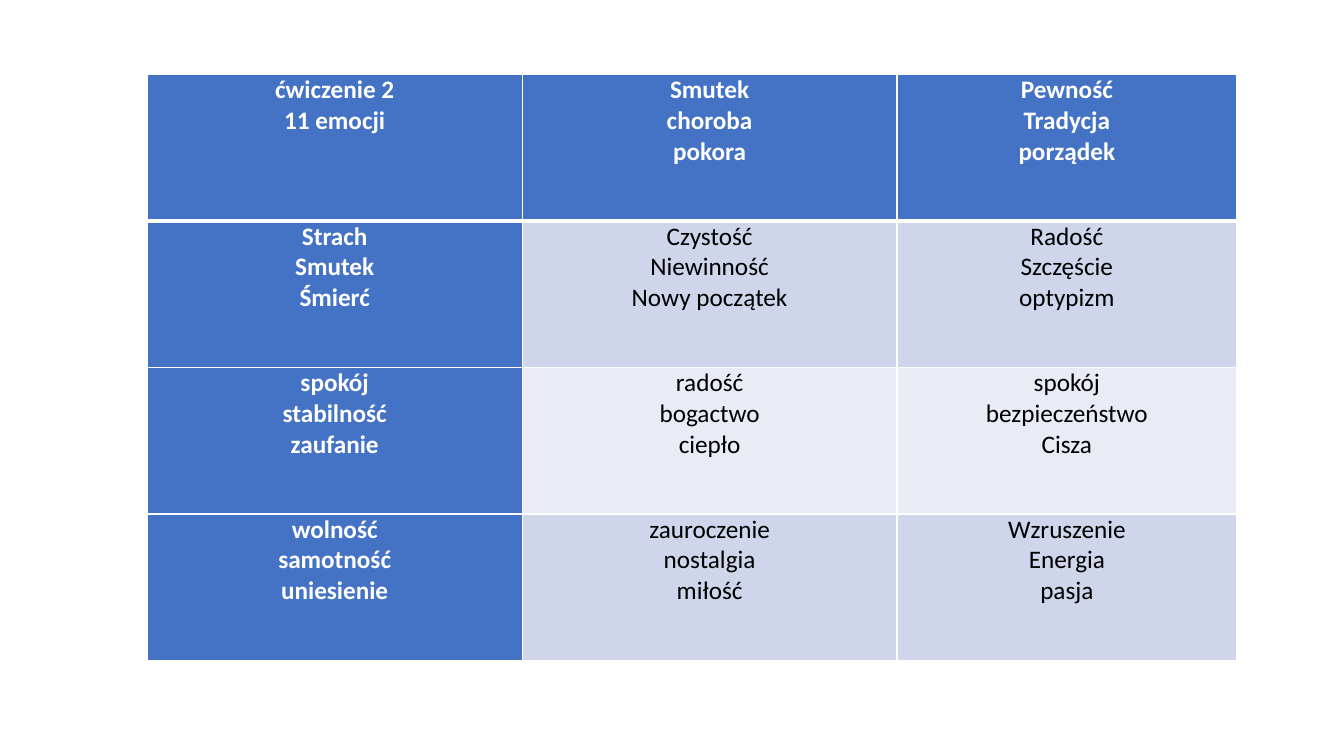
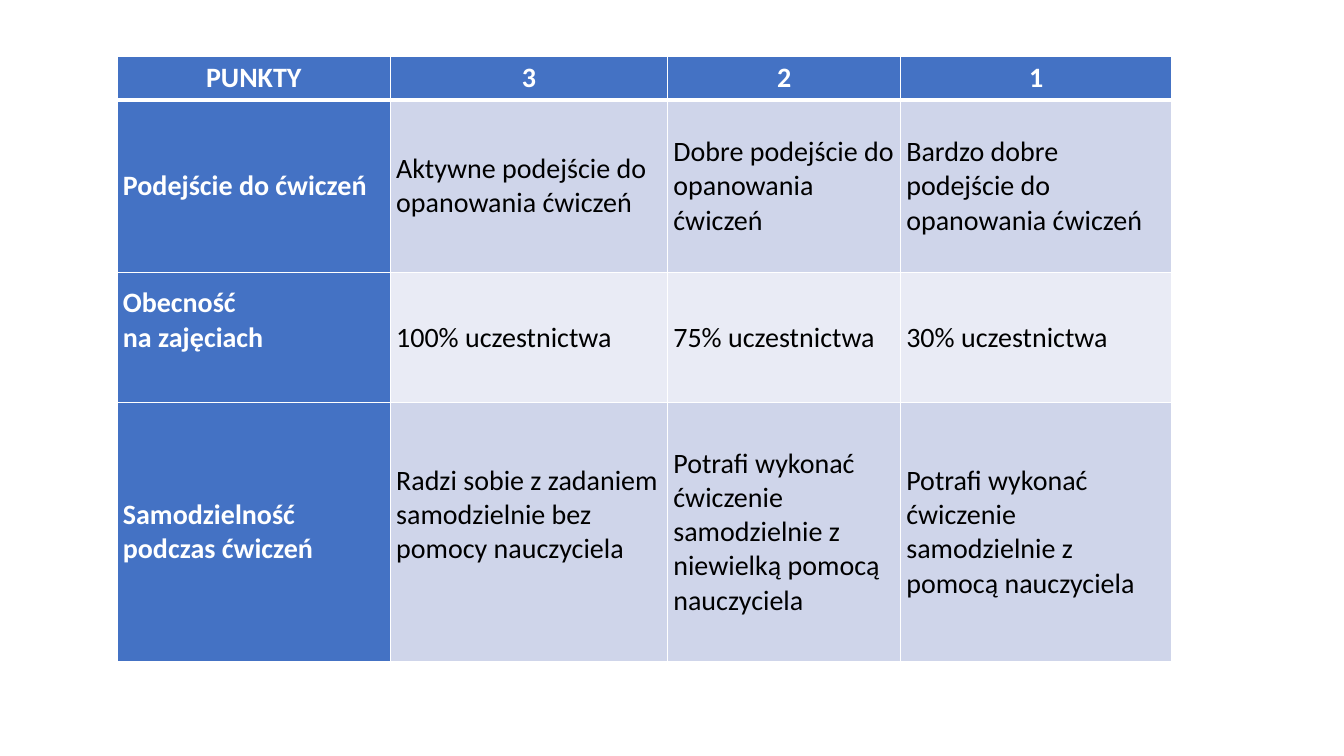
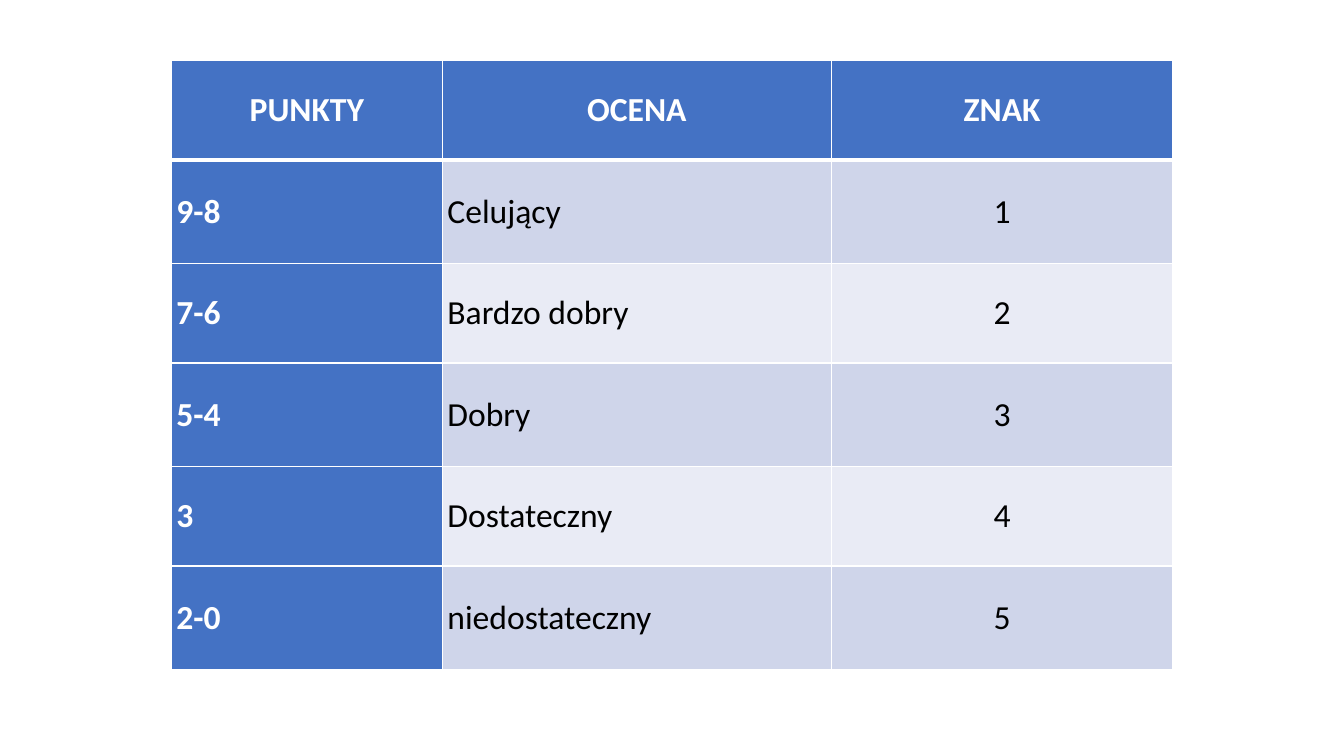
from dataclasses import dataclass

from lxml.etree import SubElement
from pptx import Presentation
from pptx.dml.color import RGBColor
from pptx.enum.text import MSO_ANCHOR as Anchor, PP_ALIGN as Align
from pptx.oxml.ns import qn
from pptx.util import Pt

FONT = "Calibri"
WHITE = "FFFFFF"
BLACK = "000000"
ACCENT = "4472C4"
BANDS = ("CFD5EA", "E9EBF5")
THIN, THICK = 1, 3

Lines = tuple[str, ...]


@dataclass(frozen=True)
class Grid:
    left: float
    top: float
    widths: tuple[float, ...]
    heights: tuple[float, ...]
    rows: tuple[tuple[Lines, ...], ...]
    size: float
    inset: float
    anchor: Anchor
    centred_columns: tuple[int, ...] = ()
    raised_cells: tuple[tuple[int, int], ...] = ()


EMOTIONS = Grid(
    left=105.2, top=53.4,
    widths=(267.8, 267.8, 242.6),
    heights=(104.6,) * 4,
    size=18, inset=3.6, anchor=Anchor.TOP, centred_columns=(0, 1, 2),
    rows=(
        (("ćwiczenie 2\n11 emocji",), ("Smutek", "choroba", "pokora"),
         ("Pewność", "Tradycja", "porządek")),
        (("Strach", "Smutek", "Śmierć"), ("Czystość", "Niewinność", "Nowy początek"),
         ("Radość", "Szczęście", "optypizm")),
        (("spokój", "stabilność", "zaufanie"), ("radość", "bogactwo", "ciepło"),
         ("spokój", "bezpieczeństwo", "Cisza")),
        (("wolność", "samotność", "uniesienie"), ("zauroczenie", "nostalgia", "miłość"),
         ("Wzruszenie", "Energia", "pasja")),
    ),
)

CRITERIA = Grid(
    left=83.7, top=40.4,
    widths=(195.2, 198, 166.4, 193.6),
    heights=(30.8, 123.6, 92.8, 185),
    size=20, inset=4.1, anchor=Anchor.MIDDLE, raised_cells=((2, 0), (3, 1)),
    rows=(
        (("PUNKTY",), ("3",), ("2",), ("1",)),
        (("Podejście do ćwiczeń",), ("Aktywne podejście do opanowania ćwiczeń",),
         ("Dobre podejście do opanowania ćwiczeń",),
         ("Bardzo dobre podejście do opanowania ćwiczeń",)),
        (("Obecność \nna zajęciach",), ("100% uczestnictwa",), ("75% uczestnictwa",),
         ("30% uczestnictwa",)),
        (("Samodzielność podczas ćwiczeń",),
         ("Radzi sobie z zadaniem samodzielnie bez pomocy nauczyciela",),
         ("Potrafi wykonać ćwiczenie samodzielnie z niewielką pomocą nauczyciela",),
         ("Potrafi wykonać ćwiczenie samodzielnie z pomocą nauczyciela",)),
    ),
)

GRADES = Grid(
    left=122.4, top=43.4,
    widths=(193.6, 277.8, 244),
    heights=(71, 74) * 3,
    size=24, inset=3.6, anchor=Anchor.MIDDLE, centred_columns=(2,),
    rows=(
        (("PUNKTY",), ("OCENA",), ("ZNAK",)),
        (("9-8",), ("Celujący",), ("1",)),
        (("7-6",), ("Bardzo dobry",), ("2",)),
        (("5-4",), ("Dobry",), ("3",)),
        (("3",), ("Dostateczny",), ("4",)),
        (("2-0",), ("niedostateczny",), ("5",)),
    ),
)


def colour(value: str) -> RGBColor:
    return RGBColor.from_string(value)


def write_text(frame, lines: Lines, *, size: float, ink: str, bold: bool, align: Align) -> None:
    for index, line in enumerate(lines):
        para = frame.paragraphs[0] if index == 0 else frame.add_paragraph()
        para.text = line
        para.alignment = align
        for span in para.runs:
            span.font.name = FONT
            span.font.size = Pt(size)
            span.font.bold = bold
            span.font.color.rgb = colour(ink)


def draw_borders(cell, row: int) -> None:
    widths = {
        "a:lnL": THIN,
        "a:lnR": THIN,
        "a:lnT": THICK if row == 1 else THIN,
        "a:lnB": THICK if row == 0 else THIN,
    }
    properties = cell._tc.get_or_add_tcPr()
    for tag, width in widths.items():
        line = SubElement(properties, qn(tag), w=str(Pt(width)))
        fill = SubElement(line, qn("a:solidFill"))
        SubElement(fill, qn("a:srgbClr"), val=WHITE)


def draw_cell(cell, grid: Grid, row: int, column: int) -> None:
    heading = row == 0 or column == 0
    centred = row == 0 or column in grid.centred_columns
    raised = (row, column) in grid.raised_cells
    draw_borders(cell, row)
    cell.fill.solid()
    cell.fill.fore_color.rgb = colour(ACCENT if heading else BANDS[(row - 1) % 2])
    cell.margin_left = cell.margin_right = Pt(grid.inset)
    cell.margin_top = Pt(0)
    cell.margin_bottom = Pt(1.22 * grid.size if raised else 0)
    cell.vertical_anchor = grid.anchor
    write_text(
        cell.text_frame, grid.rows[row][column],
        size=grid.size, ink=WHITE if heading else BLACK, bold=heading,
        align=Align.CENTER if centred else Align.LEFT,
    )


def draw_grid(page, grid: Grid) -> None:
    table = page.shapes.add_table(
        len(grid.heights), len(grid.widths), Pt(grid.left), Pt(grid.top),
        Pt(sum(grid.widths)), Pt(sum(grid.heights)),
    ).table
    table.horz_banding = False
    for column, width in zip(table.columns, grid.widths):
        column.width = Pt(width)
    for row, height in enumerate(grid.heights):
        table.rows[row].height = Pt(height)
        for column in range(len(grid.widths)):
            draw_cell(table.cell(row, column), grid, row, column)


def main() -> None:
    deck = Presentation()
    deck.slide_width, deck.slide_height = Pt(960), Pt(540)
    for grid in (EMOTIONS, CRITERIA, GRADES):
        draw_grid(deck.slides.add_slide(deck.slide_layouts[6]), grid)
    deck.save("out.pptx")


if __name__ == "__main__":
    main()
